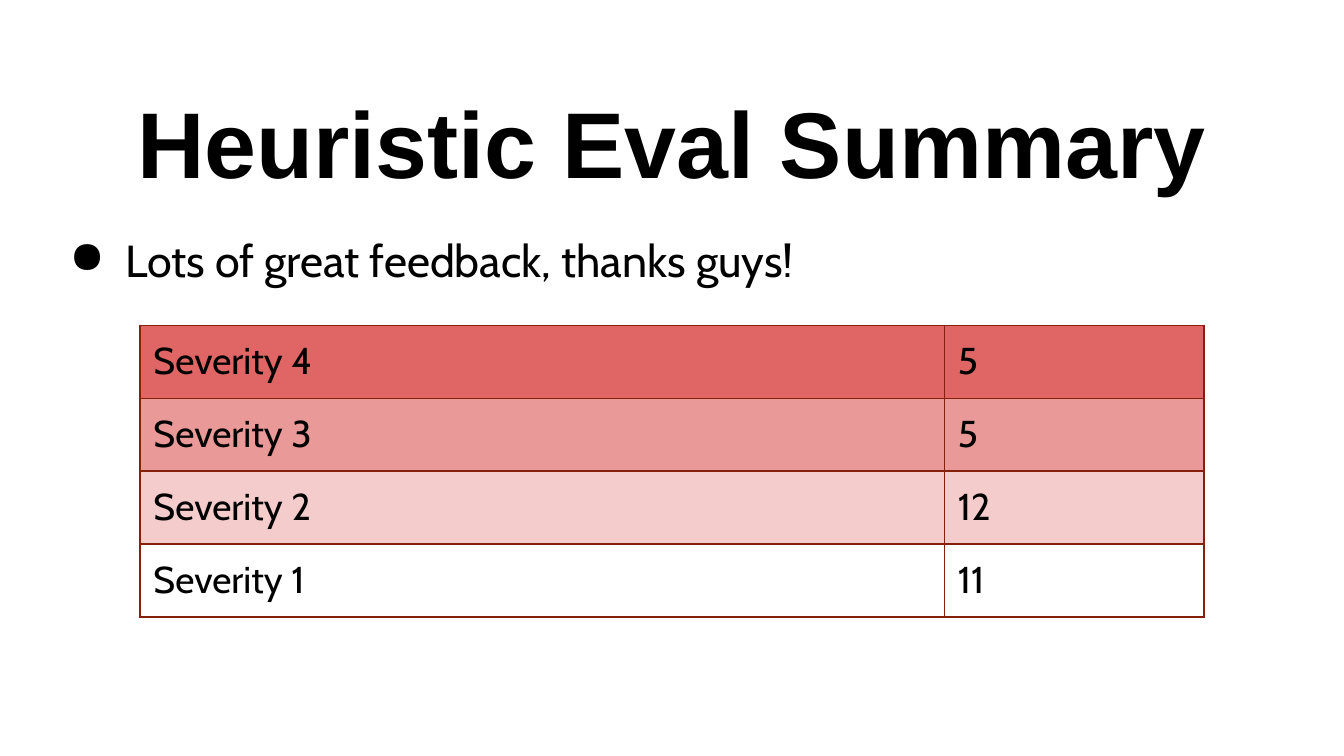
"""Build the heuristic evaluation summary slide."""
from dataclasses import dataclass

from lxml import etree
from pptx import Presentation
from pptx.dml.color import RGBColor
from pptx.enum.text import MSO_ANCHOR, PP_ALIGN
from pptx.oxml.ns import qn
from pptx.util import Pt

CENTER = PP_ALIGN.CENTER
LEFT = PP_ALIGN.LEFT
TOP = MSO_ANCHOR.TOP
MIDDLE = MSO_ANCHOR.MIDDLE
BORDER_SIDES = ("a:lnL", "a:lnR", "a:lnT", "a:lnB")


@dataclass(frozen=True)
class Theme:
    title_font: str = "Arial"
    body_font: str = "Cabin"
    title_size: float = 50
    body_size: float = 24
    table_size: float = 20
    text: str = "000000"
    border: str = "85200C"
    severity_fills: tuple = ("E06666", "EA9999", "F4CCCC", None)
    border_width: float = 0.75
    inset: float = 7.2


THEME = Theme()
SEVERITY_COUNTS = (
    ("Severity 4", "5"),
    ("Severity 3", "5"),
    ("Severity 2", "12"),
    ("Severity 1", "11"),
)


def style_paragraph(p, font, size, bold=False):
    p.font.name = font
    p.font.size = Pt(size)
    p.font.bold = bold
    p.font.color.rgb = RGBColor.from_string(THEME.text)


def set_insets(target):
    inset = Pt(THEME.inset)
    target.margin_left = target.margin_right = inset
    target.margin_top = target.margin_bottom = inset


def add_text(s, box, text, font, size, bold=False, align=LEFT, anchor=TOP):
    sp = s.shapes.add_textbox(*(Pt(v) for v in box))
    tf = sp.text_frame
    tf.word_wrap = True
    tf.vertical_anchor = anchor
    set_insets(tf)
    p = tf.paragraphs[0]
    p.text = text
    p.alignment = align
    style_paragraph(p, font, size, bold)
    return p


def add_bullet(p, char, margin, hanging):
    pPr = p._p.get_or_add_pPr()
    pPr.set("marL", str(Pt(margin)))
    pPr.set("indent", str(-Pt(hanging)))
    bullet = etree.Element(qn("a:buChar"), char=char)
    pPr.insert(0, bullet)


def set_borders(cell):
    tcPr = cell._tc.get_or_add_tcPr()
    for i, side in enumerate(BORDER_SIDES):
        ln = etree.Element(qn(side), w=str(Pt(THEME.border_width)))
        fill = etree.SubElement(ln, qn("a:solidFill"))
        etree.SubElement(fill, qn("a:srgbClr"), val=THEME.border)
        tcPr.insert(i, ln)


def fill_cell(cell, text, color):
    cell.text = text
    set_insets(cell)
    style_paragraph(cell.text_frame.paragraphs[0], THEME.body_font, THEME.table_size)
    if color:
        cell.fill.solid()
        cell.fill.fore_color.rgb = RGBColor.from_string(color)
    else:
        cell.fill.background()
    set_borders(cell)


def add_severity_table(s, left, top, col_widths, row_height):
    n = len(SEVERITY_COUNTS)
    frame = s.shapes.add_table(n, len(col_widths), Pt(left), Pt(top),
                               Pt(sum(col_widths)), Pt(row_height * n))
    table = frame.table
    table.first_row = table.horz_banding = False
    for col, width in zip(table.columns, col_widths):
        col.width = Pt(width)
    for row, values, color in zip(table.rows, SEVERITY_COUNTS, THEME.severity_fills):
        row.height = Pt(row_height)
        for cell, value in zip(row.cells, values):
            fill_cell(cell, value, color)


def main():
    prs = Presentation()
    prs.slide_width, prs.slide_height = Pt(720), Pt(405)
    s = prs.slides.add_slide(prs.slide_layouts[6])
    add_text(s, (24.5, 35.3, 671, 80.6), "Heuristic Eval Summary",
             THEME.title_font, THEME.title_size, True, CENTER, MIDDLE)
    p = add_text(s, (24, 117.4, 671, 273), "Lots of great feedback, thanks guys!",
                 THEME.body_font, THEME.body_size)
    add_bullet(p, "●", 36, 30)
    add_severity_table(s, 75, 174.2, (430.9, 139.1), 39.1)
    prs.save("out.pptx")


if __name__ == "__main__":
    main()
